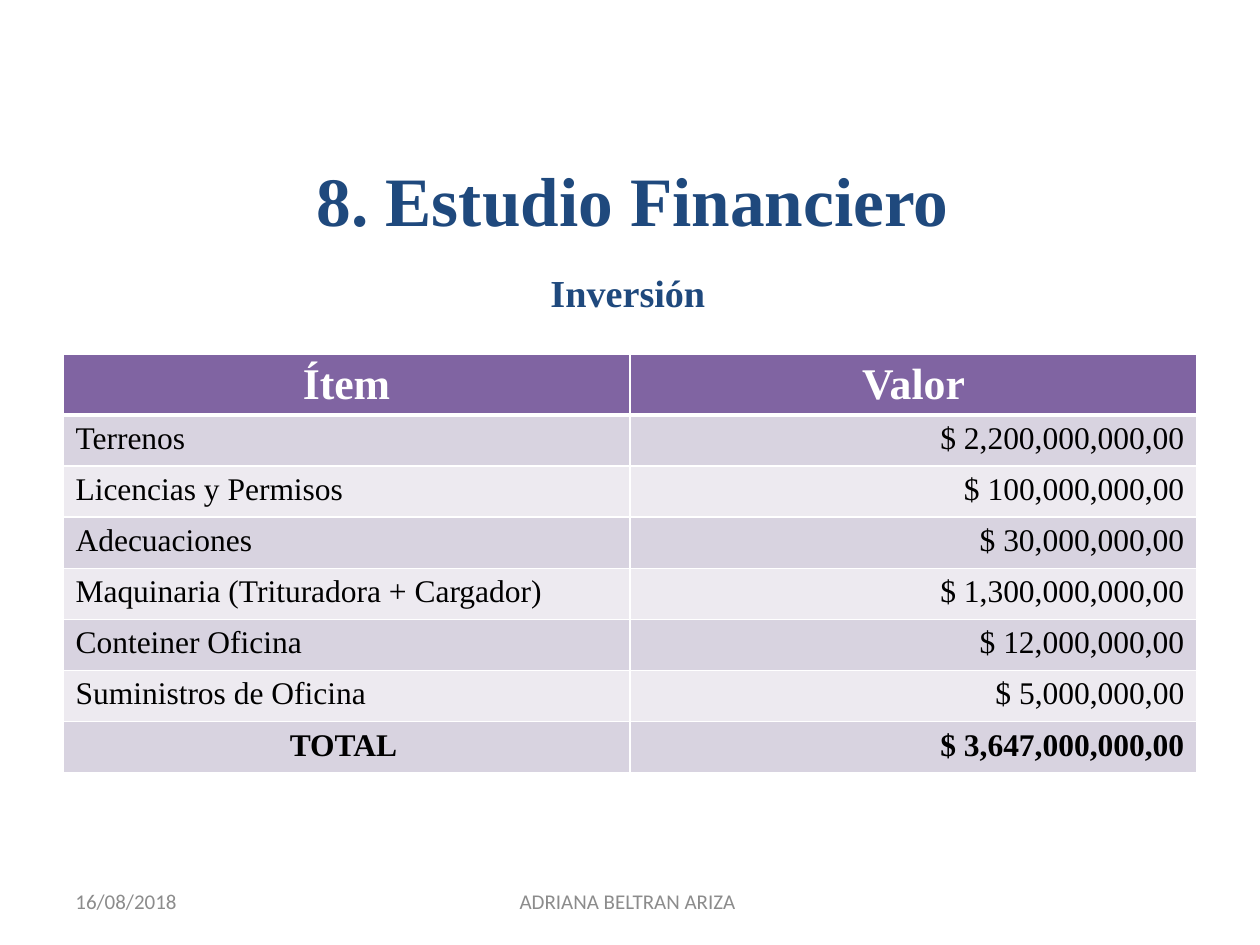
"""Build the financial study slide with its investment table."""
from dataclasses import dataclass

from lxml.etree import SubElement
from pptx import Presentation
from pptx.dml.color import RGBColor as Rgb
from pptx.enum.text import MSO_ANCHOR as Anchor, PP_ALIGN as Align
from pptx.oxml.ns import qn
from pptx.util import Pt


@dataclass(frozen=True)
class Theme:
    serif: str = "Times New Roman"
    sans: str = "Calibri"
    navy: str = "1F497D"
    purple: str = "8064A2"
    bands: tuple = ("D8D3E0", "EDEAF0")
    white: str = "FFFFFF"
    black: str = "000000"
    gray: str = "8C8C8C"
    title: float = 39.6
    subtitle: float = 21.8
    subtitle_space: float = 33
    header: float = 25
    body: float = 18
    footer: float = 12


theme = Theme()


def write(frame, runs, font, color, align, bold=False):
    frame.word_wrap = True
    frame.vertical_anchor = Anchor.MIDDLE
    paragraph = frame.paragraphs[0]
    paragraph.alignment = align
    for text, size in runs:
        run = paragraph.add_run()
        run.text = text
        run.font.name = font
        run.font.size = Pt(size)
        run.font.bold = bold
        run.font.color.rgb = Rgb.from_string(color)


def add_borders(cell, widths):
    properties = cell._tc.get_or_add_tcPr()
    for position, (side, width) in enumerate(widths.items()):
        line = SubElement(properties, qn(f"a:ln{side}"), w=str(Pt(width)))
        fill = SubElement(line, qn("a:solidFill"))
        SubElement(fill, qn("a:srgbClr"), val=theme.white)
        properties.insert(position, line)


presentation = Presentation()
presentation.slide_width, presentation.slide_height = Pt(720), Pt(540)
slide = presentation.slides.add_slide(presentation.slide_layouts[5])

title = slide.shapes.title
title.left, title.top, title.width, title.height = Pt(37.5), Pt(93.5), Pt(648), Pt(40.5)
write(title.text_frame, [("8. Estudio Financiero", theme.title)],
      theme.serif, theme.navy, Align.CENTER, True)

investment = [
    ("Ítem", "Valor"),
    ("Terrenos", "$ 2,200,000,000,00"),
    ("Licencias y Permisos", "$ 100,000,000,00"),
    ("Adecuaciones", "$ 30,000,000,00"),
    ("Maquinaria (Trituradora + Cargador)", "$ 1,300,000,000,00"),
    ("Conteiner Oficina", "$ 12,000,000,00"),
    ("Suministros de Oficina", "$ 5,000,000,00"),
    ("TOTAL ", "$ 3,647,000,000,00"),
]
header_height, row_height = 34.2, 29.2
total_row = len(investment) - 1
table = slide.shapes.add_table(
    len(investment), 2, Pt(36), Pt(202.3), Pt(648),
    Pt(header_height + total_row * row_height)).table
for column in table.columns:
    column.width = Pt(324)

for row, entries in enumerate(investment):
    is_header, is_total = row == 0, row == total_row
    table.rows[row].height = Pt(header_height if is_header else row_height)
    for column, text in enumerate(entries):
        cell = table.cell(row, column)
        cell.fill.solid()
        cell.fill.fore_color.rgb = Rgb.from_string(
            theme.purple if is_header else theme.bands[(row - 1) % 2])
        if is_header or (is_total and column == 0):
            align = Align.CENTER
        else:
            align = (Align.LEFT, Align.RIGHT)[column]
        write(cell.text_frame, [(text, theme.header if is_header else theme.body)],
              theme.serif, theme.white if is_header else theme.black,
              align, is_header or is_total)
        cell.vertical_anchor = Anchor.TOP
        add_borders(cell, {"L": 1, "R": 1, "T": 3 if row == 1 else 1,
                           "B": 3 if is_header else 1})

subtitle_runs = [("Inversión", theme.subtitle), (" ", theme.subtitle_space)]
captions = [
    (36, 500.5, 168, 28.75, [("16/08/2018", theme.footer)],
     theme.sans, theme.gray, Align.LEFT, False),
    (246, 500.5, 228, 28.75, [("ADRIANA BELTRAN ARIZA ", theme.footer)],
     theme.sans, theme.gray, Align.CENTER, False),
    (39, 142, 648, 40.5, subtitle_runs,
     theme.serif, theme.navy, Align.CENTER, True),
]
for left, top, width, height, *content in captions:
    caption = slide.shapes.add_textbox(Pt(left), Pt(top), Pt(width), Pt(height))
    write(caption.text_frame, *content)

presentation.save("out.pptx")
